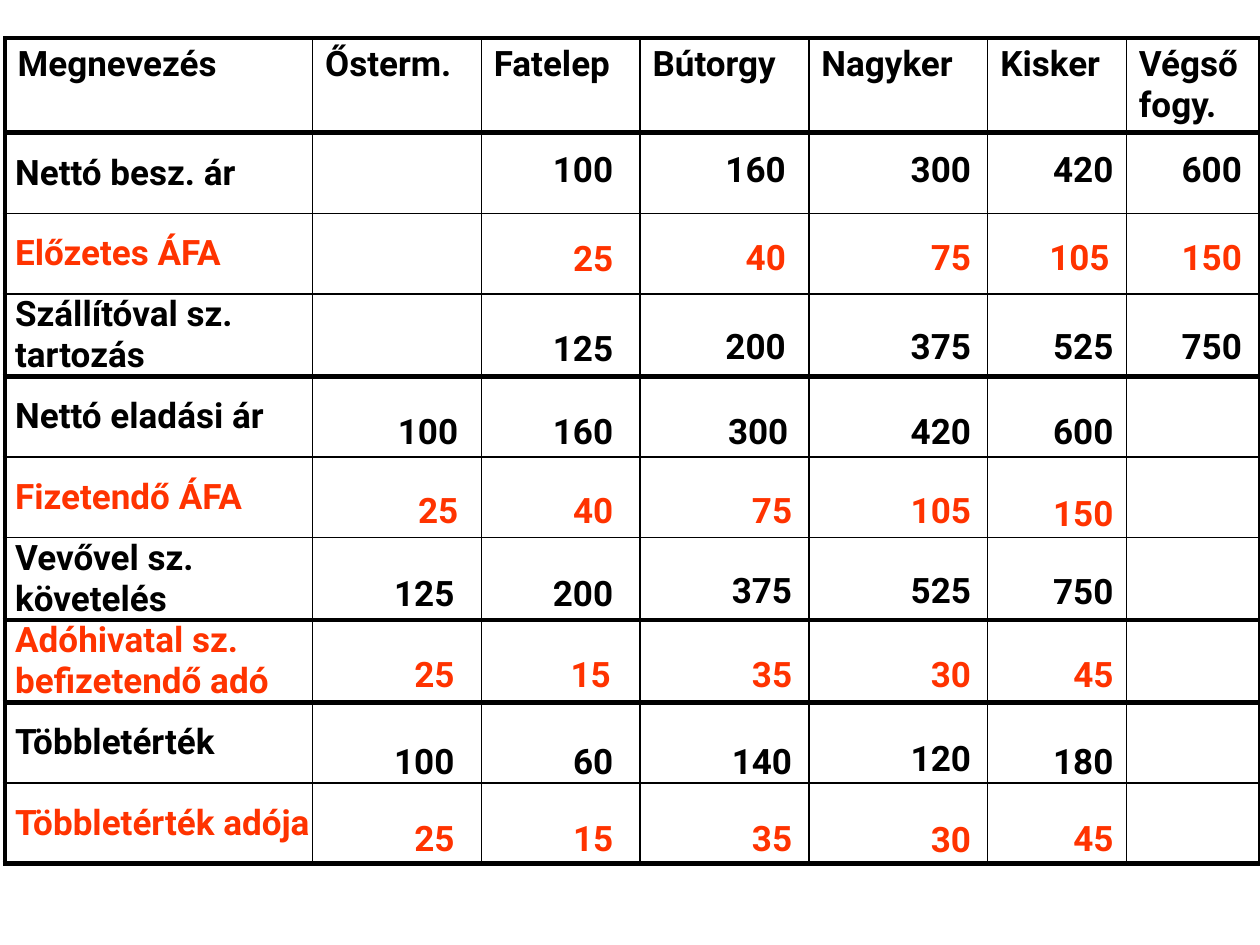
from lxml.etree import SubElement
from pptx import Presentation
from pptx.dml.color import RGBColor
from pptx.enum.text import MSO_ANCHOR, MSO_AUTO_SIZE
from pptx.oxml.ns import qn
from pptx.util import Inches, Pt

COLORS = {"ink": "000000", "tax": "FF3300"}
COLUMN_WIDTHS = [24.4, 13.4, 12.6, 13.4, 14.2, 11, 10.6]
ROW_HEIGHT = 6.4
HEADERS = ["Megnevezés", "Ősterm.", "Fatelep", "Bútorgy", "Nagyker", "Kisker", "Végső fogy."]
ROWS = [
    ("Nettó besz. ár", "ink", 11.2, ["", "100", "160", "300", "420", "600"]),
    ("Előzetes ÁFA", "tax", 18.2, ["", "25", "40", "75", "105", "150"]),
    ("Szállítóval sz. tartozás", "ink", 25.3, ["", "125", "200", "375", "525", "750"]),
    ("Nettó eladási ár", "ink", 32, ["100", "160", "300", "420", "600", ""]),
    ("Fizetendő ÁFA", "tax", 38.3, ["25", "40", "75", "105", "150", ""]),
    ("Vevővel sz. követelés", "ink", 44.6, ["125", "200", "375", "525", "750", ""]),
    ("Adóhivatal sz. befizetendő adó", "tax", 51.3, ["25", "15", "35", "30", "45", ""]),
    ("Többletérték", "ink", 58.2, ["100", "60", "140", "120", "180", ""]),
    ("Többletérték adója", "tax", 64.3, ["25", "15", "35", "30", "45", ""]),
]
VALUE_LEFTS = [30.3, 42.9, 57.1, 71.3, 82.6, 92.8]
SHORT_VALUE_INDENT = 1.6
NUDGES = {
    (0, 2): (-0.5, 0), (1, 2): (-0.5, 0), (2, 2): (-0.5, 0),
    (1, 1): (0, 0.1), (1, 4): (-0.3, 0), (2, 1): (0, 0.1),
    (3, 0): (0.3, 0), (3, 2): (-0.3, 0), (4, 0): (0.3, 0), (4, 4): (0, 0.2),
    (5, 0): (0, 0.3), (5, 1): (0, 0.3), (5, 4): (0, 0.1),
    (6, 1): (-0.2, 0), (7, 3): (0, -0.2), (8, 3): (0, 0.1),
}
THICK_BELOW = {0, 3, 6, 7, 9}
THIN, MEDIUM, THICK = 1, 2.25, 3


class SlideBuilder:
    font_name = "Roboto"
    font_size = Pt(20)

    def __init__(self, deck):
        self.page = deck.slides.add_slide(deck.slide_layouts[6])
        self.column = deck.slide_width / 100
        self.row = deck.slide_height / 75

    def across(self, columns):
        return round(columns * self.column)

    def down(self, rows):
        return round(rows * self.row)

    def text(self, para, words, color):
        span = para.add_run()
        span.text = words
        span.font.name = self.font_name
        span.font.size = self.font_size
        span.font.bold = True
        span.font.color.rgb = RGBColor.from_string(COLORS[color])

    def value(self, left, top, words, color):
        box = self.page.shapes.add_textbox(
            self.across(left), self.down(top), self.across(1.8 * len(words) + 2), self.down(4.4))
        box.text_frame.word_wrap = False
        box.text_frame.auto_size = MSO_AUTO_SIZE.SHAPE_TO_FIT_TEXT
        self.text(box.text_frame.paragraphs[0], words, color)

    def table(self, left, top, widths, row_count):
        frame = self.page.shapes.add_table(
            row_count, len(widths), self.across(left), self.down(top),
            self.across(sum(widths)), self.down(ROW_HEIGHT * row_count))
        table = frame.table
        table.first_row = table.horz_banding = False
        for table_column, width in zip(table.columns, widths):
            table_column.width = self.across(width)
        for table_row in table.rows:
            table_row.height = self.down(ROW_HEIGHT)
        return table

    def borders(self, cell, **widths):
        properties = cell._tc.get_or_add_tcPr()
        for side, width in widths.items():
            line = SubElement(properties, qn(f"a:ln{side}"), w=str(Pt(width)))
            fill = SubElement(line, qn("a:solidFill"))
            SubElement(fill, qn("a:srgbClr"), val=COLORS["ink"])
        cell.fill.background()

    def cell_text(self, cell, words, color):
        para = cell.text_frame.paragraphs[0]
        spacing = SubElement(para._p.get_or_add_pPr(), qn("a:spcBef"))
        SubElement(spacing, qn("a:spcPct"), val="20000")
        self.text(para, words, color)

    def label(self, cell, words, color):
        cell.vertical_anchor = MSO_ANCHOR.MIDDLE
        cell.margin_left = self.across(0.8)
        cell.margin_right = cell.margin_top = cell.margin_bottom = 0
        self.cell_text(cell, words, color)


def main():
    deck = Presentation()
    deck.slide_width, deck.slide_height = Inches(10), Inches(7.5)
    builder = SlideBuilder(deck)

    table = builder.table(0.4, 3, COLUMN_WIDTHS, len(ROWS) + 1)
    last_column = len(COLUMN_WIDTHS) - 1
    for row in range(len(ROWS) + 1):
        edge = THICK if row else MEDIUM
        for column in range(len(COLUMN_WIDTHS)):
            builder.borders(
                table.cell(row, column),
                L=THIN if column else edge,
                R=edge if column == last_column else THIN,
                T=MEDIUM if row == 0 else THICK if row - 1 in THICK_BELOW else THIN,
                B=THICK if row in THICK_BELOW else THIN)

    for column, header in enumerate(HEADERS):
        builder.cell_text(table.cell(0, column), header, "ink")

    for row, (label, color, top, values) in enumerate(ROWS):
        builder.label(table.cell(row + 1, 0), label, color)
        for column, words in enumerate(values):
            if words:
                shift, drop = NUDGES.get((row, column), (0, 0))
                indent = SHORT_VALUE_INDENT * (3 - len(words))
                builder.value(VALUE_LEFTS[column] + indent + shift, top + drop, words, color)

    deck.save("out.pptx")


if __name__ == "__main__":
    main()
